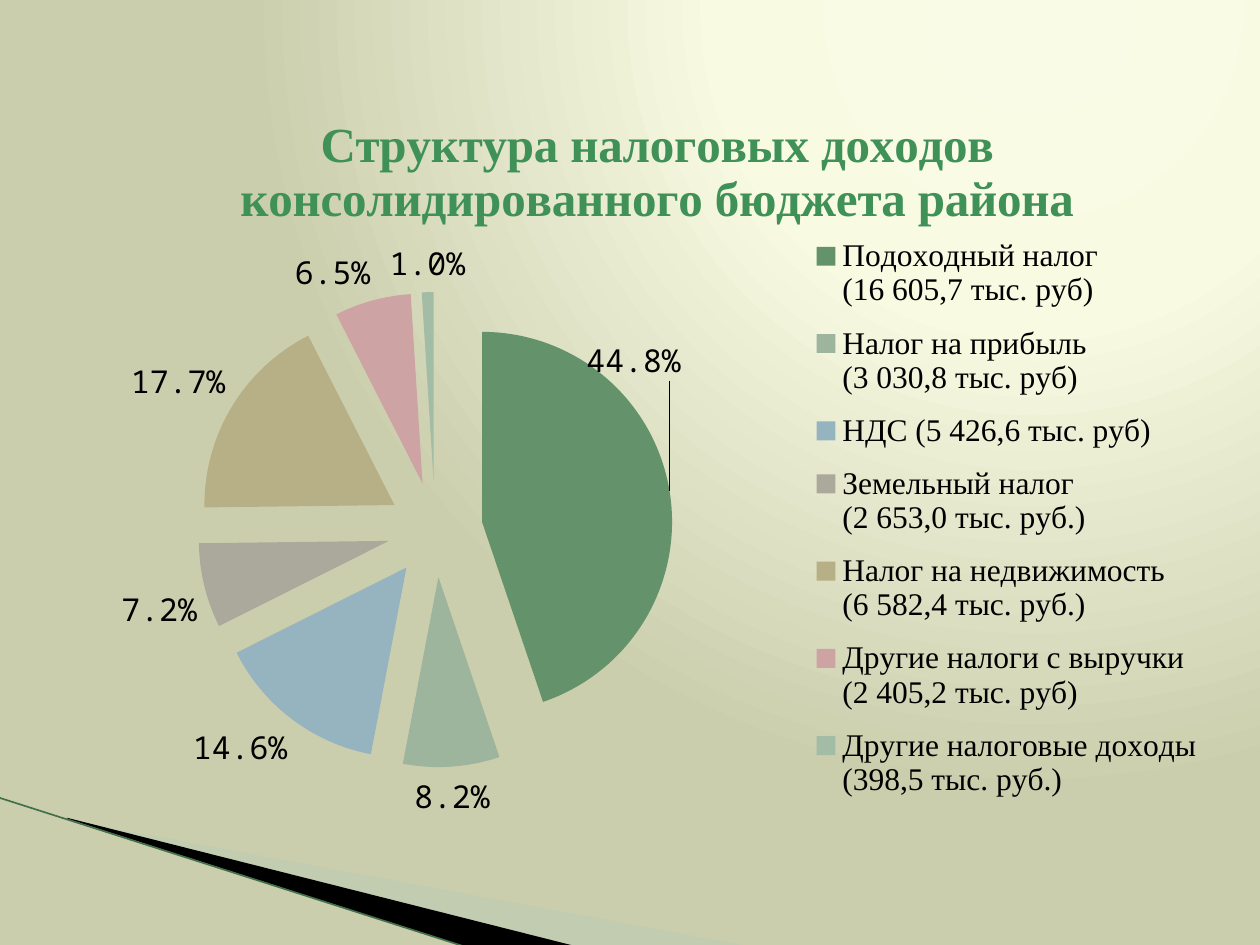
from lxml import etree
from pptx import Presentation
from pptx.chart.data import CategoryChartData
from pptx.dml.color import RGBColor
from pptx.enum.chart import XL_CHART_TYPE, XL_LABEL_POSITION, XL_LEGEND_POSITION
from pptx.enum.shapes import MSO_CONNECTOR
from pptx.oxml import parse_xml
from pptx.oxml.ns import nsdecls, qn
from pptx.util import Inches, Pt

COLORS = {
    "glow": "F9FBE7", "cream": "F8FAE2", "khaki": "CBCEAD",
    "wedge": "B3CBB5", "black": "000000", "edge": "43704C", "title": "3F9158",
}
SERIF, MONO = "Times New Roman", "Noto Sans Mono"
TITLE = "Структура налоговых доходов консолидированного бюджета района"
TAXES = [
    ("Подоходный налог\n(16 605,7 тыс. руб)", 0.448, "64926A"),
    ("Налог на прибыль\n(3 030,8 тыс. руб)", 0.082, "9DB49D"),
    ("НДС (5 426,6 тыс. руб)", 0.146, "96B4BF"),
    ("Земельный налог\n(2 653,0 тыс. руб.)", 0.072, "ABA99C"),
    ("Налог на недвижимость\n(6 582,4 тыс. руб.)", 0.177, "B7AF86"),
    ("Другие налоги с выручки\n(2 405,2 тыс. руб)", 0.065, "CEA3A4"),
    ("Другие налоговые доходы\n(398,5 тыс. руб.)", 0.01, "A2BCA6"),
]


def write(tf, text, *, name, size, color, bold=False):
    tf.text = text
    font = tf.paragraphs[0].runs[0].font
    font.name, font.size, font.bold = name, Pt(size), bold
    font.color.rgb = RGBColor.from_string(color)


def place(element, index, **fractions):
    """Give a chart part a manual layout in fractions of the chart."""
    for old in element.findall(qn("c:layout")):
        element.remove(old)
    layout = etree.Element(qn("c:layout"))
    manual = etree.SubElement(layout, qn("c:manualLayout"))
    for tag, value in fractions.items():
        etree.SubElement(manual, qn(f"c:{tag}"), val=str(value))
    element.insert(index, layout)


prs = Presentation()
prs.slide_width, prs.slide_height = Inches(10), Inches(7.5)
s = prs.slides.add_slide(prs.slide_layouts[6])

# Background: a glow from the upper right
s.background.fill.solid()
bg = s.background._cSld.bg.bgPr
stops = "".join(
    f'<a:gs pos="{pos * 1000}"><a:srgbClr val="{COLORS[key]}"/></a:gs>'
    for pos, key in [(0, "glow"), (40, "cream"), (100, "khaki")]
)
bg.replace(bg[0], parse_xml(
    f'<a:gradFill {nsdecls("a")} rotWithShape="1"><a:gsLst>{stops}</a:gsLst>'
    '<a:path path="circle"><a:fillToRect l="65000" b="98000"/></a:path></a:gradFill>'
))

# Corner wedges and their edge line
wedges = [
    ("wedge", 40, [(0.55, 6.51), (5.95, 7.51), (4.56, 7.51), (0.55, 6.5)]),
    ("black", 100, [(0.53, 6.49), (4.57, 7.51), (3.72, 7.52), (0.54, 6.5)]),
]
for key, alpha, points in wedges:
    start, *rest = [(Inches(x), Inches(y)) for x, y in points]
    builder = s.shapes.build_freeform(*start)
    builder.add_line_segments(rest)
    sp = builder.convert_to_shape()
    sp.shadow.inherit = False
    sp.fill.solid()
    sp.fill.fore_color.rgb = RGBColor.from_string(COLORS[key])
    sp.line.fill.background()
    if alpha < 100:
        color = sp._element.spPr.find(f".//{qn('a:srgbClr')}")
        etree.SubElement(color, qn("a:alpha"), val=str(alpha * 1000))

edge = s.shapes.add_connector(
    MSO_CONNECTOR.STRAIGHT, Inches(-0.01), Inches(6.33), Inches(3.71), Inches(7.52))
edge.line.color.rgb = RGBColor.from_string(COLORS["edge"])
edge.line.width = Pt(0.95)
etree.SubElement(edge._element.spPr, qn("a:effectLst"))

# Pie of tax revenue
data = CategoryChartData(number_format="0.0%")
data.categories = [name for name, _, _ in TAXES]
data.add_series(TITLE, [share for _, share, _ in TAXES])
chart = s.shapes.add_chart(
    XL_CHART_TYPE.PIE, Inches(0.67), Inches(0.52), Inches(8.98), Inches(6.14), data).chart
chart.font.name, chart.font.size = MONO, Pt(18)
chart.font.color.rgb = RGBColor.from_string(COLORS["black"])

chart.has_title = True
write(chart.chart_title.text_frame, TITLE,
      name=SERIF, size=28, color=COLORS["title"], bold=True)
place(chart.chart_title._element, 1, xMode="edge", yMode="edge", x=0.13, y=0.05)

chart.has_legend = True
legend = chart.legend
legend.position = XL_LEGEND_POSITION.RIGHT
legend.include_in_layout = False
legend.font.name, legend.font.size = SERIF, Pt(18)
legend.font.color.rgb = RGBColor.from_string(COLORS["black"])
place(legend._element, 1, xMode="edge", yMode="edge", x=0.64, y=0.2, w=0.35, h=0.77)

plot = chart.plots[0]
plot.vary_by_categories = True
place(chart._chartSpace.chart.plotArea, 0, layoutTarget="inner",
      xMode="edge", yMode="edge", x=0.1, y=0.29, w=0.42, h=0.62)

series = plot.series[0]
explosion = etree.Element(qn("c:explosion"), val="25")
series.format.fill.solid()
series._element.spPr.addnext(explosion)
for i, (_, _, color) in enumerate(TAXES):
    fmt = series.points[i].format
    fmt.fill.solid()
    fmt.fill.fore_color.rgb = RGBColor.from_string(color)
    fmt.line.fill.background()
    fmt_explosion = etree.Element(qn("c:explosion"), val="25")
    series._element.findall(qn("c:dPt"))[i].find(qn("c:spPr")).addprevious(fmt_explosion)

labels = series.data_labels
labels.show_value = True
labels.show_percentage = False
labels.number_format, labels.number_format_is_linked = "0.0%", False
labels.position = XL_LABEL_POSITION.OUTSIDE_END
labels.font.name, labels.font.size = MONO, Pt(18)
labels.font.color.rgb = RGBColor.from_string(COLORS["black"])

# The largest share has its label moved up onto the slice
moved = series.points[0].data_label
moved.position = XL_LABEL_POSITION.OUTSIDE_END
moved.font.name, moved.font.size = MONO, Pt(18)
moved.font.color.rgb = RGBColor.from_string(COLORS["black"])
label = labels._element.find(qn("c:dLbl"))
place(label, 1, x=-0.08, y=-0.14)
label.insert(2, etree.Element(qn("c:numFmt"), formatCode="0.0%", sourceLinked="0"))

prs.save("out.pptx")
